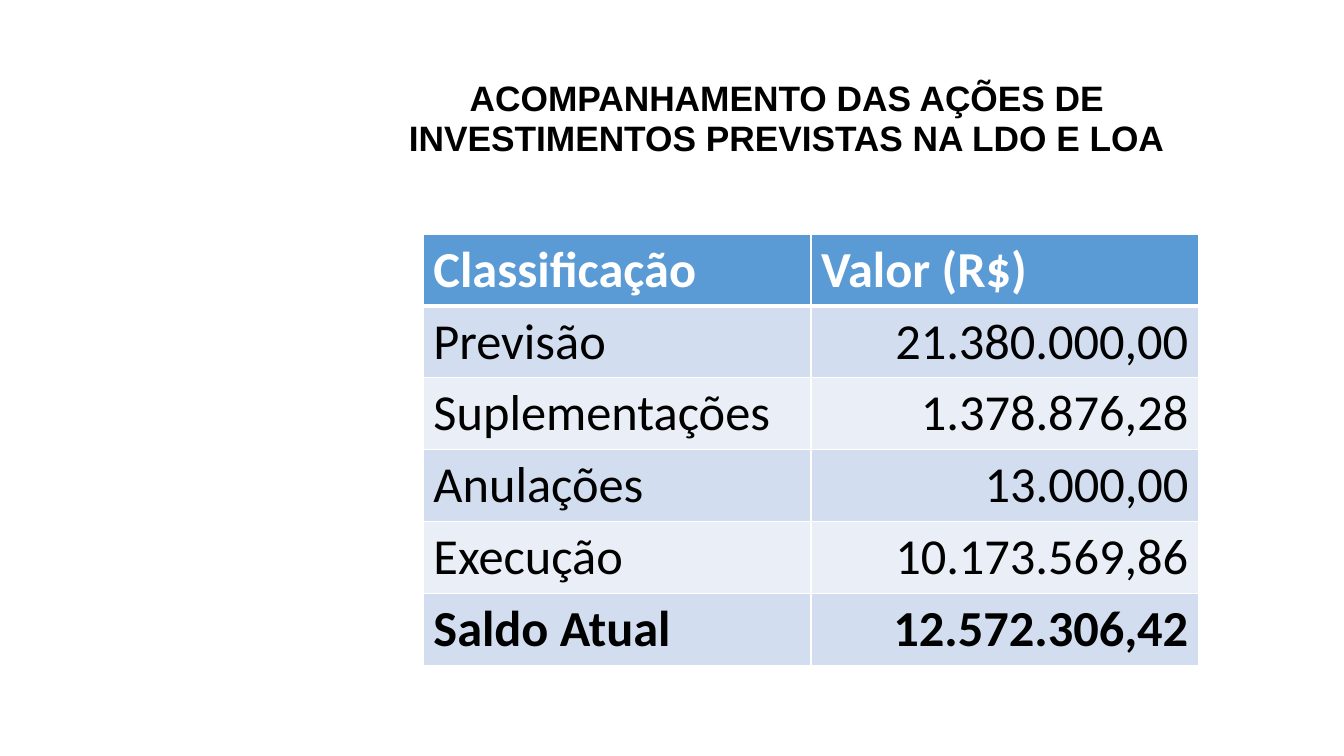
from lxml import etree
from pptx import Presentation
from pptx.dml.color import RGBColor
from pptx.enum import text
from pptx.oxml import ns
from pptx.util import Cm, Pt

# Content
TITLE = "ACOMPANHAMENTO DAS AÇÕES DE\vINVESTIMENTOS PREVISTAS NA LDO E LOA"
ROWS = [
    ("Classificação", "Valor (R$)"),
    ("Previsão", "21.380.000,00"),
    ("Suplementações", "1.378.876,28"),
    ("Anulações", "13.000,00"),
    ("Execução", "10.173.569,86"),
    ("Saldo Atual", "12.572.306,42"),
]
HEADER_FILL, BANDS = "5B9BD5", ("EAEFF7", "D2DEEF")
WHITE, BLACK = "FFFFFF", "000000"
COLUMN_WIDTH, ROW_HEIGHT = 9.77, 1.81


def color(value):
    return RGBColor.from_string(value)


def style_font(paragraph, name, size, value, bold):
    font = paragraph.font
    font.name, font.size, font.bold = name, Pt(size), bold
    font.color.rgb = color(value)


def add_borders(cell, bottom_width):
    properties = cell._tc.get_or_add_tcPr()
    widths = {"lnL": 1, "lnR": 1, "lnT": 1, "lnB": bottom_width}
    for position, (side, width) in enumerate(widths.items()):
        line = etree.Element(ns.qn(f"a:{side}"), w=str(Pt(width)))
        fill = etree.SubElement(line, ns.qn("a:solidFill"))
        etree.SubElement(fill, ns.qn("a:srgbClr"), val=WHITE)
        properties.insert(position, line)


presentation = Presentation()
presentation.slide_width, presentation.slide_height = Cm(33.87), Cm(19.05)
slide = presentation.slides.add_slide(presentation.slide_layouts[6])

# Title
title = slide.shapes.add_textbox(Cm(8.59), Cm(1.88), Cm(22.48), Cm(3.68))
frame = title.text_frame
frame.word_wrap = True
frame.vertical_anchor = text.MSO_ANCHOR.TOP
paragraph = frame.paragraphs[0]
paragraph.text = TITLE
paragraph.alignment = text.PP_ALIGN.CENTER
paragraph.line_spacing = 0.94
style_font(paragraph, "Arial", 25.2, BLACK, True)

# Table
columns = len(ROWS[0])
table = slide.shapes.add_table(
    len(ROWS), columns, Cm(10.67), Cm(5.9),
    Cm(COLUMN_WIDTH * columns), Cm(ROW_HEIGHT * len(ROWS))).table
for row, values in enumerate(ROWS):
    header, total = row == 0, row == len(ROWS) - 1
    for column, value in enumerate(values):
        cell = table.cell(row, column)
        cell.fill.solid()
        cell.fill.fore_color.rgb = color(HEADER_FILL if header else BANDS[row % 2])
        add_borders(cell, 3 if header else 1)
        paragraph = cell.text_frame.paragraphs[0]
        paragraph.text = value
        if column and not header:
            paragraph.alignment = text.PP_ALIGN.RIGHT
        style_font(paragraph, "Calibri", 36, WHITE if header else BLACK, header or total)

presentation.save("out.pptx")
